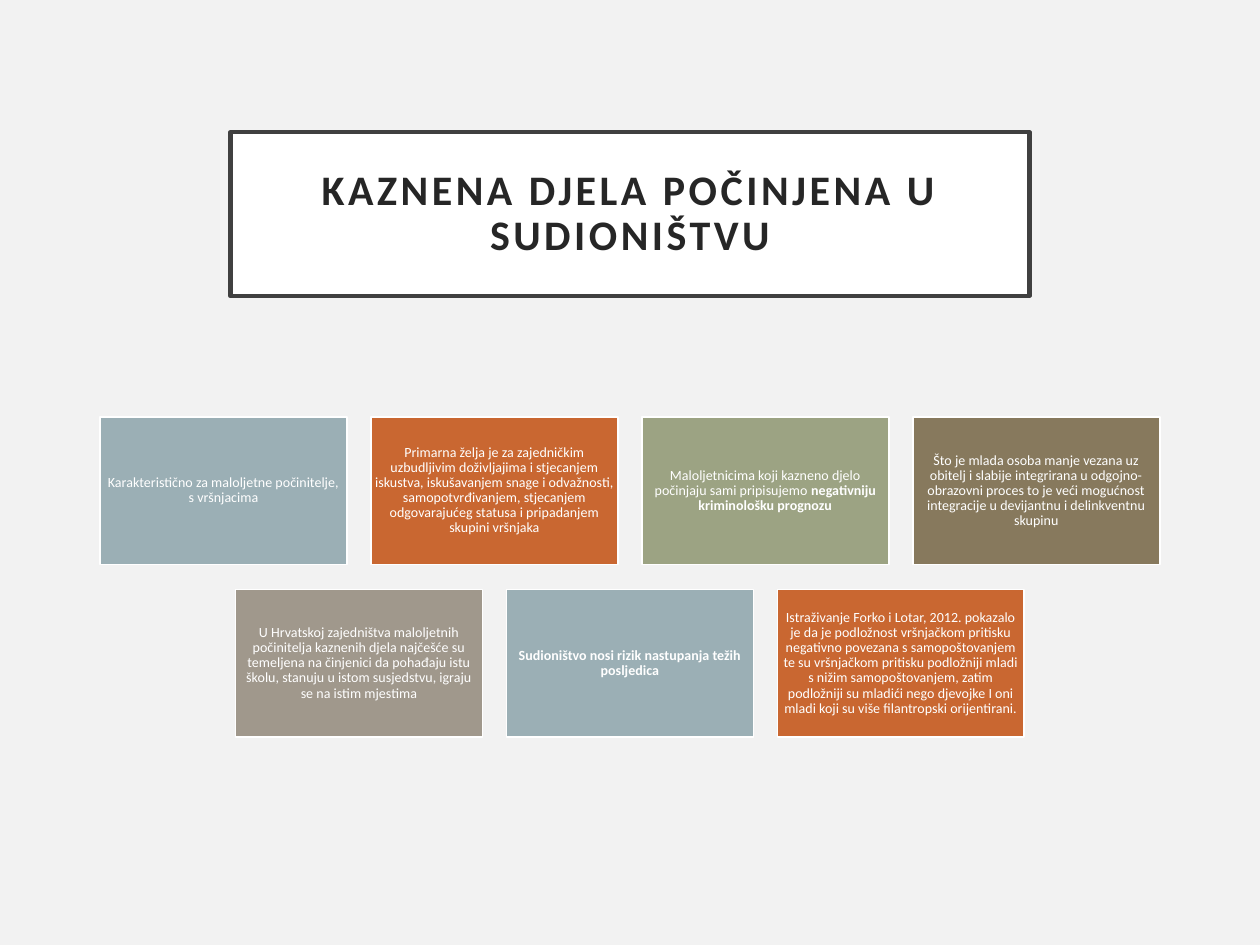
from pptx import Presentation
from pptx.dml.color import RGBColor
from pptx.enum.shapes import MSO_SHAPE
from pptx.enum.text import MSO_ANCHOR, PP_ALIGN
from pptx.util import Inches, Pt

WHITE = RGBColor(0xFF, 0xFF, 0xFF)
BACKGROUND = RGBColor(0xF2, 0xF2, 0xF2)
FRAME = RGBColor(0x40, 0x40, 0x40)
INK = RGBColor(0x26, 0x26, 0x26)
BLUE = RGBColor(0x9B, 0xAF, 0xB5)
ORANGE = RGBColor(0xC9, 0x67, 0x31)
GREEN = RGBColor(0x9C, 0xA3, 0x83)
BROWN = RGBColor(0x87, 0x79, 0x5D)
TAUPE = RGBColor(0xA0, 0x98, 0x8C)

SLIDE_WIDTH = 10
CARD_WIDTH, CARD_HEIGHT = 1.96, 1.17
CARD_PITCH = 2.15
ROW_TOP, ROW_PITCH = 3.31, 1.37

# Each card: fill, then its text as (words, bold) pieces
CARD_ROWS = [
    [
        (BLUE, [("Karakteristično za maloljetne počinitelje, s vršnjacima", False)]),
        (ORANGE, [("Primarna želja je za zajedničkim uzbudljivim doživljajima i "
                   "stjecanjem iskustva, iskušavanjem snage i odvažnosti, "
                   "samopotvrđivanjem, stjecanjem odgovarajućeg statusa i "
                   "pripadanjem skupini vršnjaka", False)]),
        (GREEN, [("Maloljetnicima koji kazneno djelo počinjaju sami pripisujemo ", False),
                 ("negativniju kriminološku prognozu", True)]),
        (BROWN, [("Što je mlada osoba manje vezana uz obitelj i slabije integrirana "
                  "u odgojno-obrazovni proces to je veći mogućnost integracije u "
                  "devijantnu i delinkventnu skupinu", False)]),
    ],
    [
        (TAUPE, [("U Hrvatskoj zajedništva maloljetnih počinitelja kaznenih djela "
                  "najčešće su temeljena na činjenici da pohađaju istu školu, stanuju "
                  "u istom susjedstvu, igraju se na istim mjestima", False)]),
        (BLUE, [("Sudioništvo nosi rizik nastupanja težih posljedica", True)]),
        (ORANGE, [("Istraživanje Forko i Lotar, 2012. pokazalo je da je podložnost "
                   "vršnjačkom pritisku negativno povezana s samopoštovanjem te su "
                   "vršnjačkom pritisku podložniji mladi s nižim samopoštovanjem, "
                   "zatim podložniji su mladići nego djevojke I oni mladi koji su "
                   "više filantropski orijentirani.", False)]),
    ],
]


class SlideBuilder:
    font_name = "Calibri"
    line_spacing = 0.9

    def __init__(self, slide):
        self.slide = slide

    def background(self, color):
        fill = self.slide.background.fill
        fill.solid()
        fill.fore_color.rgb = color

    def box(self, left, top, width, height, fill, line, line_width,
            pieces, size, color, inset):
        """Add a filled rectangle with one centred paragraph and return it."""
        box = self.slide.shapes.add_shape(
            MSO_SHAPE.RECTANGLE, Inches(left), Inches(top), Inches(width), Inches(height))
        box.shadow.inherit = False
        box.fill.solid()
        box.fill.fore_color.rgb = fill
        box.line.color.rgb = line
        box.line.width = Pt(line_width)

        frame = box.text_frame
        frame.word_wrap = True
        frame.vertical_anchor = MSO_ANCHOR.MIDDLE
        frame.margin_left = frame.margin_right = Inches(inset)
        frame.margin_top = frame.margin_bottom = Inches(inset)

        paragraph = frame.paragraphs[0]
        paragraph.alignment = PP_ALIGN.CENTER
        paragraph.line_spacing = self.line_spacing
        paragraph.font.name = self.font_name
        paragraph.font.size = Pt(size)
        paragraph.font.color.rgb = color
        for words, bold in pieces:
            run = paragraph.add_run()
            run.text = words
            run.font.bold = bold
        return box

    def title(self, text):
        box = self.box(1.83, 1.05, 6.34, 1.3, WHITE, FRAME, 2.5,
                       [(text, True)], 24, INK, 0.2)
        # Letter spacing of 2 pt
        run = box.text_frame.paragraphs[0].runs[0]
        run.font._element.set("spc", "200")

    def card_row(self, top, cards):
        row_width = (len(cards) - 1) * CARD_PITCH + CARD_WIDTH
        row_left = (SLIDE_WIDTH - row_width) / 2
        for column, (fill, pieces) in enumerate(cards):
            self.box(row_left + column * CARD_PITCH, top, CARD_WIDTH, CARD_HEIGHT,
                     fill, WHITE, 1, pieces, 8, WHITE, 0.03)


def main():
    presentation = Presentation()
    presentation.slide_width = Inches(SLIDE_WIDTH)
    presentation.slide_height = Inches(7.5)
    builder = SlideBuilder(presentation.slides.add_slide(presentation.slide_layouts[6]))

    # Background and title
    builder.background(BACKGROUND)
    builder.title("KAZNENA DJELA POČINJENA U SUDIONIŠTVU")

    # Centred rows of cards
    for index, cards in enumerate(CARD_ROWS):
        builder.card_row(ROW_TOP + index * ROW_PITCH, cards)

    presentation.save("out.pptx")


if __name__ == "__main__":
    main()
